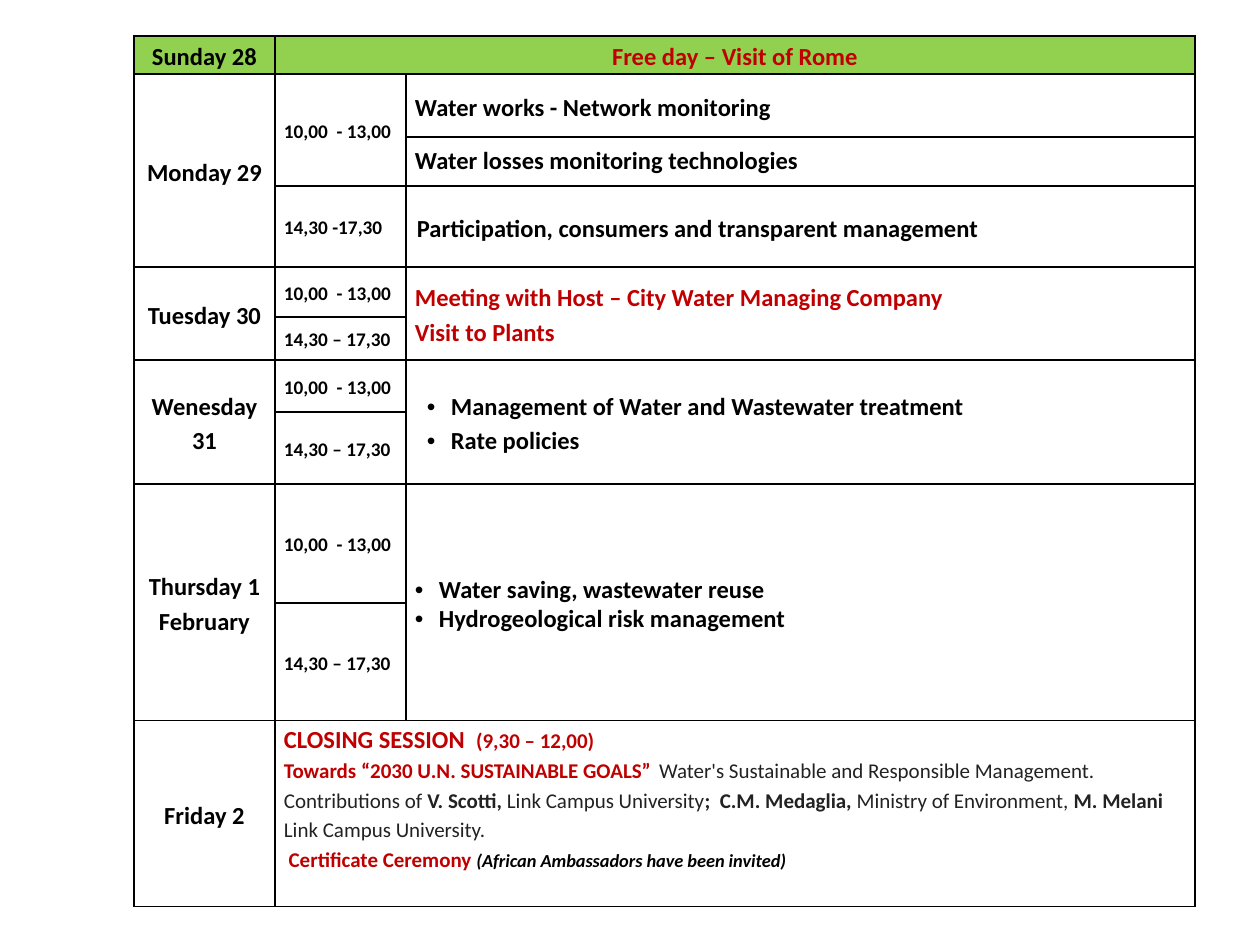
"""Build the one-slide weekly programme of a water management course."""
from dataclasses import dataclass

import lxml.etree
import pptx
import pptx.dml.color
import pptx.enum.text
import pptx.oxml.ns
import pptx.util

ALIGN = pptx.enum.text.PP_ALIGN
ANCHOR = pptx.enum.text.MSO_ANCHOR
PX = 914400 / 126


@dataclass(frozen=True)
class Theme:
    font: str = "Calibri"
    black: str = "000000"
    red: str = "C00000"
    grey: str = "222222"
    green: str = "92D050"
    white: str = "FFFFFF"
    heading: float = 14
    detail: float = 12
    time: float = 11
    note: float = 10.5
    small: float = 10
    spacing: float = 1.15


THEME = Theme()


@dataclass
class Run:
    text: str
    size: float = THEME.heading
    color: str = THEME.black
    bold: bool = True
    italic: bool = False


@dataclass
class Line:
    runs: list
    align: object = ALIGN.LEFT
    spacing: float = THEME.spacing
    indent: int = 0
    bullet: bool = False


def line(text, size=THEME.heading, color=THEME.black, **layout):
    return Line([Run(text, size, color)], **layout)


def emu(pixels):
    return pptx.util.Emu(round(pixels * PX))


class SlideBuilder:
    def __init__(self, slide, theme):
        self.slide = slide
        self.theme = theme

    def table(self, left, top, columns, rows):
        frame = self.slide.shapes.add_table(
            len(rows), len(columns), emu(left), emu(top), emu(sum(columns)), emu(sum(rows)))
        table = frame.table
        table.first_row = table.horz_banding = False
        for column, width in zip(table.columns, columns):
            column.width = emu(width)
        for row, height in zip(table.rows, rows):
            row.height = emu(height)
        for cell in table.iter_cells():
            cell.fill.background()
            self.border(cell)
        return table

    def border(self, cell):
        properties = cell._tc.get_or_add_tcPr()
        for position, side in enumerate(("lnL", "lnR", "lnT", "lnB")):
            edge = lxml.etree.Element(pptx.oxml.ns.qn(f"a:{side}"), w=str(pptx.util.Pt(1)))
            fill = lxml.etree.SubElement(edge, pptx.oxml.ns.qn("a:solidFill"))
            lxml.etree.SubElement(fill, pptx.oxml.ns.qn("a:srgbClr"), val=self.theme.black)
            properties.insert(position, edge)

    def cell(self, table, row, column, lines, rows=1, columns=1, fill=None, anchor=ANCHOR.MIDDLE):
        cell = table.cell(row, column)
        if rows > 1 or columns > 1:
            cell.merge(table.cell(row + rows - 1, column + columns - 1))
        if fill:
            cell.fill.solid()
            cell.fill.fore_color.rgb = pptx.dml.color.RGBColor.from_string(fill)
        cell.margin_left = cell.margin_right = emu(9)
        cell.margin_top = cell.margin_bottom = 0
        cell.vertical_anchor = anchor
        for index, item in enumerate(lines):
            paragraphs = cell.text_frame
            paragraph = paragraphs.add_paragraph() if index else paragraphs.paragraphs[0]
            self.paragraph(paragraph, item)

    def paragraph(self, paragraph, item):
        paragraph.alignment = item.align
        paragraph.line_spacing = item.spacing
        properties = paragraph._p.get_or_add_pPr()
        properties.set("marL", str(emu(item.indent)))
        properties.set("indent", str(emu(-24 if item.bullet else 0)))
        if item.bullet:
            lxml.etree.SubElement(properties, pptx.oxml.ns.qn("a:buFont"), typeface="Arial")
            lxml.etree.SubElement(properties, pptx.oxml.ns.qn("a:buChar"), char="•")
        for part in item.runs:
            run = paragraph.add_run()
            run.text = part.text
            run.font.name = self.theme.font
            run.font.size = pptx.util.Pt(part.size)
            run.font.bold = part.bold
            run.font.italic = part.italic
            run.font.color.rgb = pptx.dml.color.RGBColor.from_string(part.color)


def closing_session():
    theme = THEME

    def red(text, size=theme.detail):
        return Run(text, size, theme.red)

    def grey(text, bold=False, size=theme.detail):
        return Run(text, size, theme.grey, bold)

    return [
        Line([red("CLOSING SESSION  ", theme.heading), red("(9,30 – 12,00)")]),
        Line([
            red("Towards “2030 U.N. SUSTAINABLE GOALS”"),
            grey("  ", size=theme.small),
            grey("Water's Sustainable and Responsible Management. Contributions of "),
            grey("V. Scotti, ", True),
            grey("Link Campus University"),
            grey(";  C.M. Medaglia, ", True),
            grey("Ministry of Environment, "),
            grey("M. Melani ", True),
            grey("Link Campus University."),
        ]),
        Line([red(" Certificate Ceremony "),
              Run("(African Ambassadors have been invited)", theme.note, italic=True)]),
    ]


def main():
    presentation = pptx.Presentation()
    presentation.slide_width = pptx.util.Inches(10)
    presentation.slide_height = pptx.util.Inches(7.5)
    slide = presentation.slides.add_slide(presentation.slide_layouts[6])
    builder = SlideBuilder(slide, THEME)
    table = builder.table(
        134, 36, [141, 131, 789], [38, 63, 49, 81, 50, 43, 52, 72, 119, 118, 186])

    days = [
        (0, 1, "Sunday 28", THEME.green), (1, 3, "Monday 29", None),
        (4, 2, "Tuesday 30", None), (6, 2, "Wenesday 31", None),
        (8, 2, "Thursday 1 February", None), (10, 1, "Friday 2", THEME.white),
    ]
    for row, rows, day, fill in days:
        builder.cell(table, row, 0, [line(day, align=ALIGN.CENTER)], rows, fill=fill)

    morning, afternoon = "10,00  - 13,00", "14,30 – 17,30"
    times = [(1, 2, morning), (3, 1, "14,30 -17,30")]
    for row in (4, 6, 8):
        times += [(row, 1, morning), (row + 1, 1, afternoon)]
    for row, rows, time in times:
        builder.cell(table, row, 1, [line(time, THEME.time)], rows)

    topics = [
        (1, 1, [line("Water works - Network monitoring")]),
        (2, 1, [line("Water losses monitoring technologies", spacing=1.0)]),
        (3, 1, [line("Participation, consumers and transparent management", indent=2)]),
        (4, 2, [line("Meeting with Host – City Water Managing Company", color=THEME.red),
                line("Visit to Plants", color=THEME.red)]),
        (6, 2, [line("Management of Water and Wastewater treatment", indent=36, bullet=True),
                line("Rate policies", indent=36, bullet=True)]),
        (8, 2, [line("Water saving, wastewater reuse", indent=24, bullet=True),
                line("Hydrogeological risk management", indent=24, bullet=True, spacing=1.0)]),
    ]
    for row, rows, lines in topics:
        builder.cell(table, row, 2, lines, rows)

    free_day = line("Free day – Visit of Rome", color=THEME.red, align=ALIGN.CENTER)
    builder.cell(table, 0, 1, [free_day], columns=2, fill=THEME.green)
    builder.cell(table, 10, 1, closing_session(), columns=2, fill=THEME.white, anchor=ANCHOR.TOP)
    presentation.save("out.pptx")


if __name__ == "__main__":
    main()
